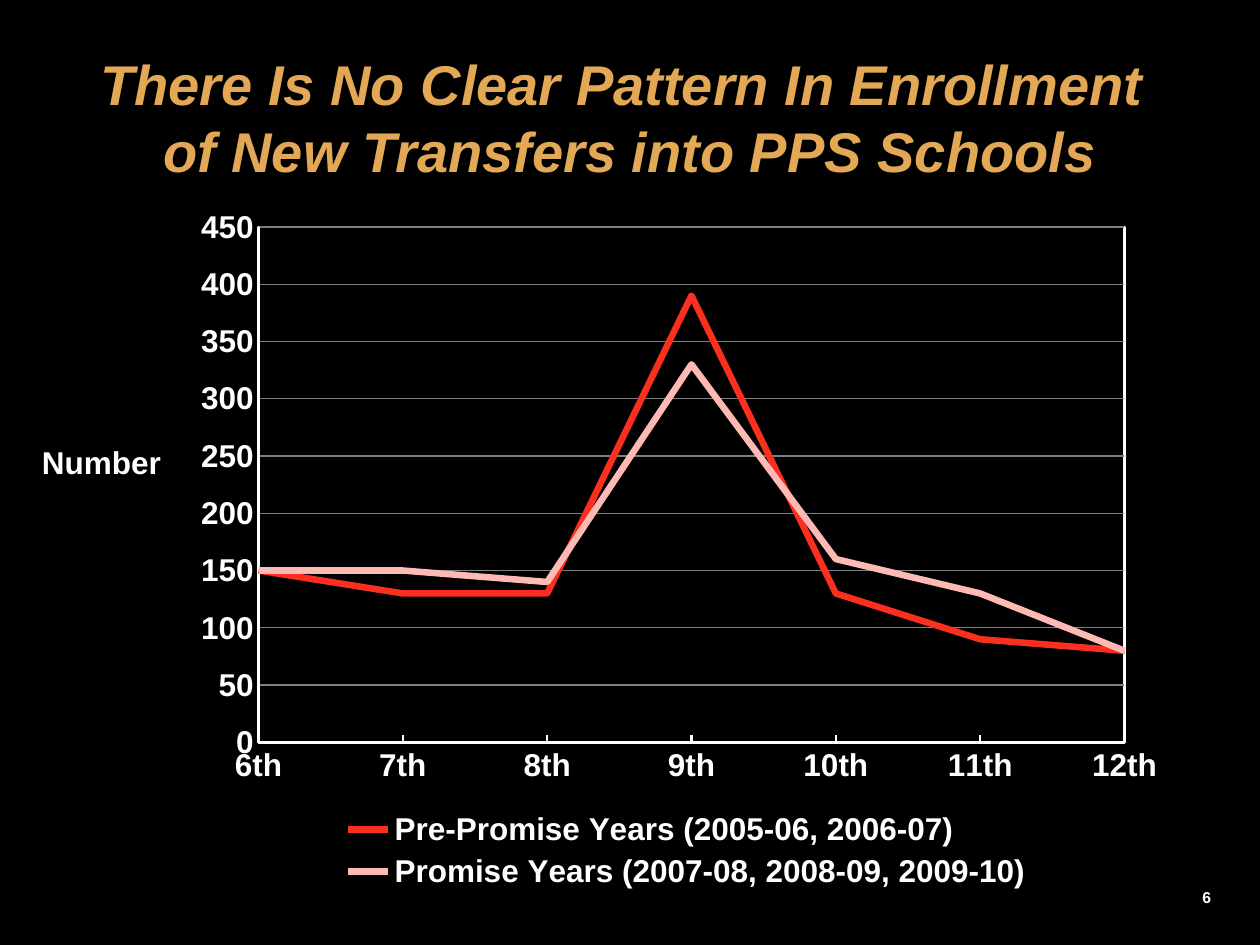
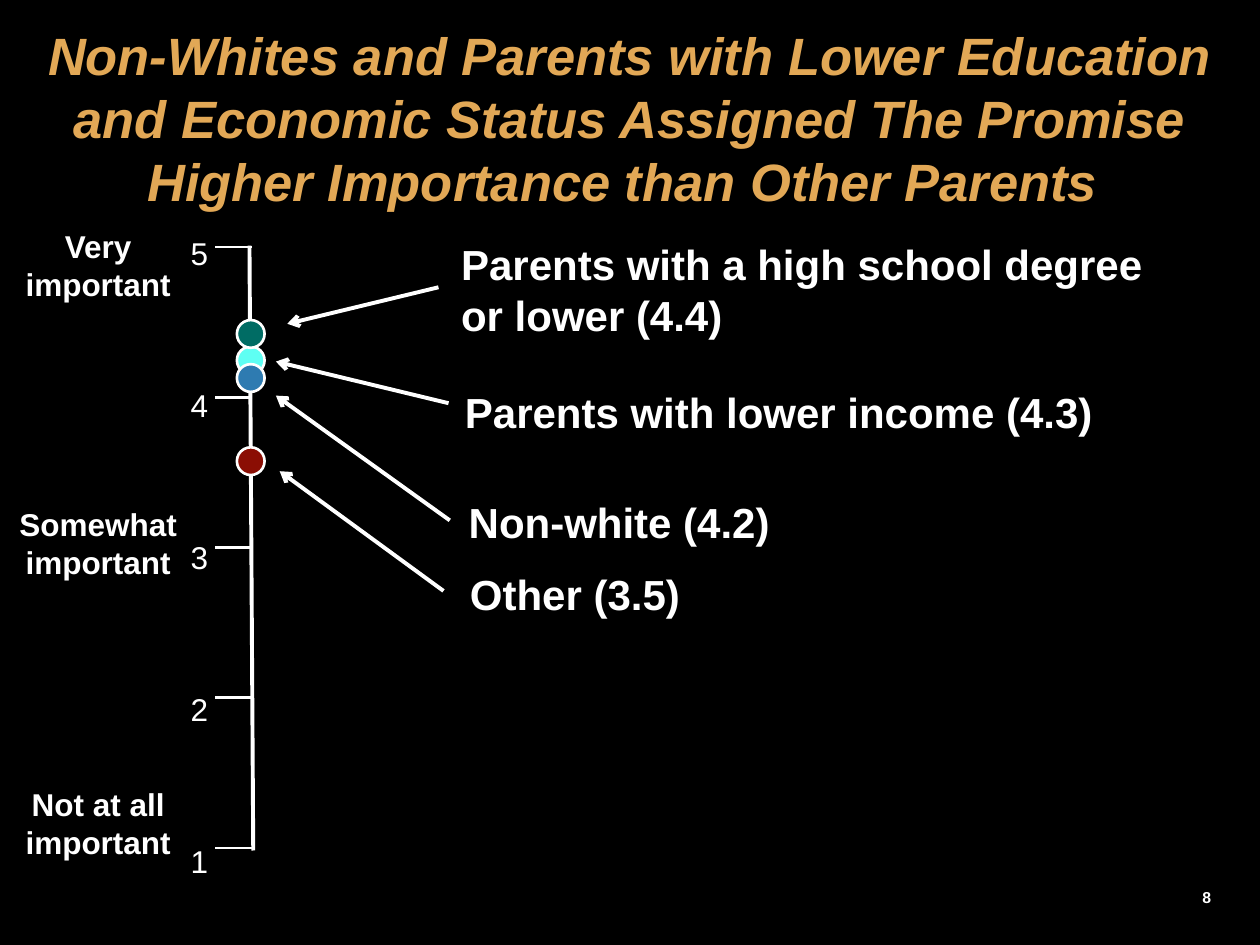
import dataclasses
import typing

import lxml.etree
import pptx
import pptx.chart.data
import pptx.dml.color
import pptx.enum.chart
import pptx.enum.shapes
import pptx.enum.text
import pptx.oxml.ns
import pptx.util

Inches = pptx.util.Inches
Pt = pptx.util.Pt
Align = pptx.enum.text.PP_ALIGN
Anchor = pptx.enum.text.MSO_ANCHOR
qn = pptx.oxml.ns.qn


@dataclasses.dataclass(frozen=True)
class Theme:
    font: str = "Arial"
    background: str = "000000"
    text: str = "FFFFFF"
    title: str = "E2A856"
    grid: str = "808080"
    pre_promise: str = "FA2F1F"
    promise: str = "FDBAB4"
    page_size: float = 9
    label_size: float = 18
    finding_size: float = 24
    thin_line: float = 1.5
    thick_line: float = 2.25


THEME = Theme()


class Box(typing.NamedTuple):
    left: float
    top: float
    width: float
    height: float


class Segment(typing.NamedTuple):
    start_x: float
    start_y: float
    end_x: float
    end_y: float


@dataclasses.dataclass(frozen=True)
class Finding:
    text: str
    box: Box
    dot_top: float
    dot_color: str
    arrow: Segment


class ScaleLabel(typing.NamedTuple):
    text: str
    top: float


class Trend(typing.NamedTuple):
    name: str
    values: tuple[int, ...]
    color: str


GRADES = ("6th", "7th", "8th", "9th", "10th", "11th", "12th")
TRENDS = (
    Trend("Pre-Promise Years (2005-06, 2006-07)",
          (150, 130, 130, 390, 130, 90, 80), THEME.pre_promise),
    Trend("Promise Years (2007-08, 2008-09, 2009-10)",
          (150, 150, 140, 330, 160, 130, 80), THEME.promise),
)
SCALE_LABELS = (
    ScaleLabel("Not at all important", 6.18),
    ScaleLabel("Somewhat important", 3.96),
    ScaleLabel("Very important", 1.75),
)
FINDINGS = (
    Finding("Parents with lower income (4.3)", Box(3.69, 3.07, 6.2, 0.4),
            2.75, "5EFFF3", Segment(3.56, 3.2, 2.19, 2.87)),
    Finding("Parents with a high school degree or lower (4.4)",
            Box(3.66, 1.89, 5.76, 0.81),
            2.54, "006C64", Segment(3.48, 2.28, 2.28, 2.57)),
    Finding("Other (3.5)", Box(3.73, 4.51, 4.6, 0.41),
            3.55, "8B0E04", Segment(3.52, 4.69, 2.22, 3.74)),
    Finding("Non-white (4.2)", Box(3.72, 3.94, 6.2, 0.4),
            2.89, "2E7BB1", Segment(3.57, 4.13, 2.19, 3.14)),
)
SCALE_TOP, SCALE_BOTTOM = 1.96, 6.73
SCALE_POINTS = (5, 4, 3, 2, 1)
DOT_LEFT, DOT_SIZE = 1.88, 0.22


def rgb(color: str) -> pptx.dml.color.RGBColor:
    return pptx.dml.color.RGBColor.from_string(color)


def format_font(font, size: float, color: str = THEME.text,
                bold: bool = True, italic: bool = False) -> None:
    font.name = THEME.font
    font.size = Pt(size)
    font.bold = bold
    font.italic = italic
    font.color.rgb = rgb(color)


def format_line(line, color: str, width: float) -> None:
    line.color.rgb = rgb(color)
    line.width = Pt(width)


def place(shape, box: Box) -> None:
    shape.left, shape.top, shape.width, shape.height = map(Inches, box)


def clear_insets(text_frame) -> None:
    text_frame.margin_left = text_frame.margin_right = 0
    text_frame.margin_top = text_frame.margin_bottom = 0


def add_text(slide, text: str, box: Box, size: float,
             align: Align = Align.CENTER, bold: bool = True):
    shape = slide.shapes.add_textbox(*map(Inches, box))
    text_frame = shape.text_frame
    text_frame.word_wrap = True
    text_frame.text = text
    for paragraph in text_frame.paragraphs:
        paragraph.alignment = align
        for run in paragraph.runs:
            format_font(run.font, size, bold=bold)
    return text_frame


def add_line(slide, segment: Segment, width: float, arrow: bool = False) -> None:
    connector = slide.shapes.add_connector(
        pptx.enum.shapes.MSO_CONNECTOR.STRAIGHT, *map(Inches, segment))
    format_line(connector.line, THEME.text, width)
    if arrow:
        lxml.etree.SubElement(connector.line._get_or_add_ln(), qn("a:tailEnd"), type="arrow")
    properties = connector._element.find(qn("p:spPr"))
    lxml.etree.SubElement(properties, qn("a:effectLst"))


def add_titled_slide(presentation, title: str, box: Box, size: float, page: str):
    slide = presentation.slides.add_slide(presentation.slide_layouts[5])
    shape = slide.shapes.title
    place(shape, box)
    text_frame = shape.text_frame
    text_frame.text = title
    text_frame.word_wrap = True
    text_frame.auto_size = pptx.enum.text.MSO_AUTO_SIZE.NONE
    text_frame.vertical_anchor = Anchor.TOP
    clear_insets(text_frame)
    for paragraph in text_frame.paragraphs:
        paragraph.alignment = Align.CENTER
        for run in paragraph.runs:
            format_font(run.font, size, THEME.title, italic=True)
    add_text(slide, page, Box(9.29, 7, 0.42, 0.23), THEME.page_size, Align.RIGHT)
    return slide


def set_layout(parent, position: int, box: Box, inner: bool = False) -> None:
    for old_layout in parent.findall(qn("c:layout")):
        parent.remove(old_layout)
    layout = lxml.etree.Element(qn("c:layout"))
    manual = lxml.etree.SubElement(layout, qn("c:manualLayout"))
    settings = [("layoutTarget", "inner")] if inner else []
    settings += [("xMode", "edge"), ("yMode", "edge")]
    settings += [(name, str(value)) for name, value in zip("xywh", box)]
    for name, value in settings:
        lxml.etree.SubElement(manual, qn(f"c:{name}"), val=value)
    parent.insert(position, layout)


def start_lines_on_axis(plot_area) -> None:
    cross_between = lxml.etree.Element(qn("c:crossBetween"), val="midCat")
    plot_area.find(f".//{qn('c:majorUnit')}").addprevious(cross_between)


def frame_plot(plot_area, color: str, width: float) -> None:
    properties = lxml.etree.SubElement(plot_area, qn("c:spPr"))
    lxml.etree.SubElement(properties, qn("a:noFill"))
    line = lxml.etree.SubElement(properties, qn("a:ln"), w=str(Pt(width)))
    fill = lxml.etree.SubElement(line, qn("a:solidFill"))
    lxml.etree.SubElement(fill, qn("a:srgbClr"), val=color)


def add_enrollment_chart(slide) -> None:
    chart_data = pptx.chart.data.CategoryChartData()
    chart_data.categories = GRADES
    for trend in TRENDS:
        chart_data.add_series(trend.name, trend.values)
    chart = slide.shapes.add_chart(
        pptx.enum.chart.XL_CHART_TYPE.LINE,
        *map(Inches, Box(1.42, 1.58, 7.9, 5.53)), chart_data).chart
    format_font(chart.font, THEME.label_size)
    chart.has_title = False
    chart.has_legend = True
    chart.legend.position = pptx.enum.chart.XL_LEGEND_POSITION.BOTTOM
    chart.legend.include_in_layout = False

    tick = pptx.enum.chart.XL_TICK_MARK
    chart.category_axis.major_tick_mark = tick.INSIDE
    value_axis = chart.value_axis
    value_axis.major_tick_mark = tick.NONE
    value_axis.minimum_scale, value_axis.maximum_scale = 0, 450
    value_axis.major_unit = 50
    value_axis.has_major_gridlines = True
    format_line(value_axis.major_gridlines.format.line, THEME.grid, 0.75)
    for axis in (chart.category_axis, value_axis):
        format_line(axis.format.line, THEME.text, 1.25)

    plot = chart.plots[0]
    plot.vary_by_categories = False
    for series, trend in zip(plot.series, TRENDS):
        series.smooth = False
        series.marker.style = pptx.enum.chart.XL_MARKER_STYLE.NONE
        format_line(series.format.line, trend.color, 3.75)

    plot_area = chart._chartSpace.find(f".//{qn('c:plotArea')}")
    start_lines_on_axis(plot_area)
    set_layout(plot_area, 0, Box(0.08, 0.04, 0.87, 0.74), inner=True)
    frame_plot(plot_area, THEME.text, 1.25)
    legend = chart._chartSpace.find(f".//{qn('c:legend')}")
    set_layout(legend, 1, Box(0.15, 0.87, 0.72, 0.13))


def build_enrollment_slide(presentation) -> None:
    slide = add_titled_slide(
        presentation,
        "There Is No Clear Pattern In Enrollment \vof New Transfers into PPS Schools",
        Box(0, 0.39, 10, 0.67), 32, "6")
    add_enrollment_chart(slide)
    add_text(slide, "Number", Box(0, 3.47, 1.61, 0.5), THEME.label_size)


def add_importance_scale(slide) -> None:
    numbers = add_text(slide, "\n".join(map(str, SCALE_POINTS)),
                       Box(0.67, 1.21, 1.08, 5.82), THEME.label_size,
                       Align.RIGHT, bold=False)
    for index, paragraph in enumerate(numbers.paragraphs):
        paragraph.line_spacing = 3.0
        paragraph.space_before = Pt(22 if index else 0)
    for label in SCALE_LABELS:
        add_text(slide, label.text, Box(0, label.top, 1.56, 0.71), THEME.label_size)
    add_line(slide, Segment(2.01, 6.75, 1.98, 1.95), THEME.thick_line)
    step = (SCALE_BOTTOM - SCALE_TOP) / (len(SCALE_POINTS) - 1)
    for index in range(len(SCALE_POINTS)):
        tick_y = SCALE_TOP + index * step
        add_line(slide, Segment(2, tick_y, 1.71, tick_y), THEME.thin_line)


def add_dot(slide, finding: Finding) -> None:
    dot = slide.shapes.add_shape(
        pptx.enum.shapes.MSO_SHAPE.OVAL,
        *map(Inches, Box(DOT_LEFT, finding.dot_top, DOT_SIZE, DOT_SIZE)))
    dot.shadow.inherit = False
    dot.fill.solid()
    dot.fill.fore_color.rgb = rgb(finding.dot_color)
    format_line(dot.line, THEME.text, THEME.thin_line)


def add_finding_text(slide, finding: Finding) -> None:
    text_frame = add_text(slide, finding.text, finding.box,
                          THEME.finding_size, Align.LEFT)
    clear_insets(text_frame)
    text_frame.vertical_anchor = Anchor.MIDDLE


def build_importance_slide(presentation) -> None:
    slide = add_titled_slide(
        presentation,
        "Non-Whites and Parents with Lower Education and Economic Status "
        "Assigned The Promise Higher Importance than Other Parents ",
        Box(0, 0.18, 10, 1.03), 30, "8")
    add_importance_scale(slide)
    for finding in FINDINGS:
        add_dot(slide, finding)
    for finding in FINDINGS:
        add_finding_text(slide, finding)
        add_line(slide, finding.arrow, THEME.thick_line, arrow=True)


def main() -> None:
    presentation = pptx.Presentation()
    presentation.slide_width = Inches(10)
    presentation.slide_height = Inches(7.5)
    background = presentation.slide_master.background.fill
    background.solid()
    background.fore_color.rgb = rgb(THEME.background)
    build_enrollment_slide(presentation)
    build_importance_slide(presentation)
    presentation.save("out.pptx")


if __name__ == "__main__":
    main()
